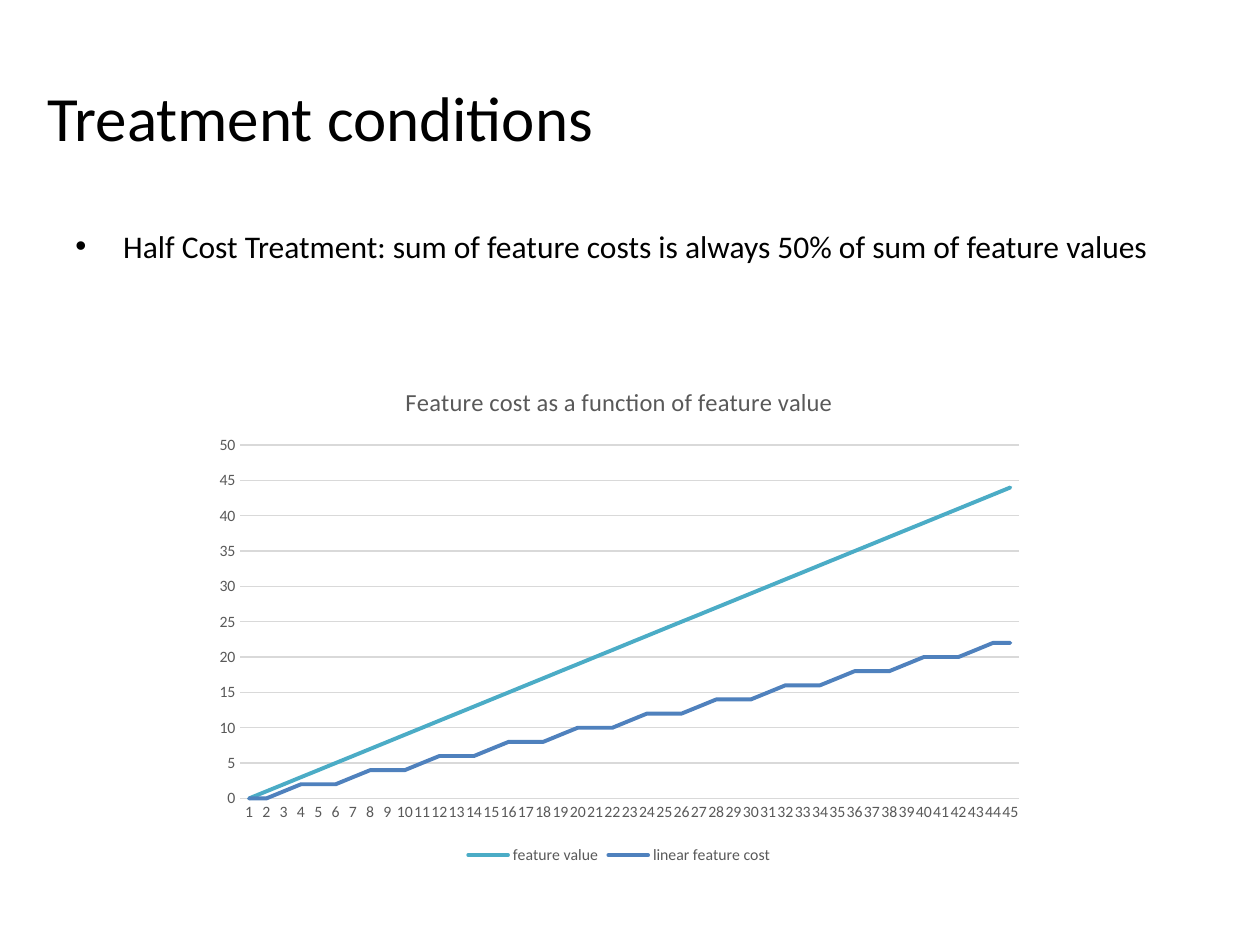
import pptx
import pptx.chart.data
import pptx.dml.color
import pptx.enum.chart
import pptx.enum.text
import pptx.oxml
import pptx.oxml.ns
import pptx.util
from pptx.util import Inches

BLACK = pptx.dml.color.RGBColor(0x00, 0x00, 0x00)
GREY = pptx.dml.color.RGBColor(0x59, 0x59, 0x59)
GRID = pptx.dml.color.RGBColor(0xD9, 0xD9, 0xD9)
TEAL = pptx.dml.color.RGBColor(0x4B, 0xAC, 0xC6)
BLUE = pptx.dml.color.RGBColor(0x4F, 0x81, 0xBD)
FONT = "Calibri"


def style_font(font, size, color):
    font.name = FONT
    font.size = pptx.util.Pt(size)
    font.bold = False
    font.color.rgb = color


def style_line(line, color, width):
    line.color.rgb = color
    line.width = pptx.util.Pt(width)


def write_text(frame, text, *, size, color=BLACK, anchor=None, bullet_indent=None):
    """Fill a text frame with one left-aligned paragraph."""
    frame.word_wrap = True
    if anchor is not None:
        frame.vertical_anchor = anchor
    paragraph = frame.paragraphs[0]
    paragraph.alignment = pptx.enum.text.PP_ALIGN.LEFT
    run = paragraph.add_run()
    run.text = text
    style_font(run.font, size, color)
    if bullet_indent is not None:
        properties = paragraph._p.get_or_add_pPr()
        properties.set("marL", str(bullet_indent))
        properties.set("indent", str(-bullet_indent))
        namespace = pptx.oxml.ns.nsdecls("a")
        for tag in (f'<a:buFont {namespace} typeface="Arial"/>',
                    f'<a:buChar {namespace} char="•"/>'):
            properties.append(pptx.oxml.parse_xml(tag))


def add_title(slide, text):
    title = slide.shapes.title
    title.left, title.top = Inches(0.28), Inches(0.3)
    title.width, title.height = Inches(9.53), Inches(1.25)
    write_text(title.text_frame, text, size=36,
               anchor=pptx.enum.text.MSO_ANCHOR.MIDDLE)


def add_bullet(slide, text):
    body = slide.shapes.add_textbox(Inches(0.5), Inches(1.75), Inches(9), Inches(4.95))
    write_text(body.text_frame, text, size=18, bullet_indent=Inches(0.38))


def style_axes(chart):
    for axis in (chart.category_axis, chart.value_axis):
        axis.major_tick_mark = pptx.enum.chart.XL_TICK_MARK.NONE
        axis.minor_tick_mark = pptx.enum.chart.XL_TICK_MARK.NONE
        style_font(axis.tick_labels.font, 9, GREY)
    style_line(chart.category_axis.format.line, GRID, 0.75)
    chart.value_axis.format.line.fill.background()
    chart.value_axis.has_major_gridlines = True
    style_line(chart.value_axis.major_gridlines.format.line, GRID, 0.75)
    chart.value_axis.minimum_scale = 0
    chart.value_axis.maximum_scale = 50
    chart.value_axis.major_unit = 5


def add_cost_chart(slide):
    # The cost of a feature is half its value, in whole units
    feature_values = range(45)
    cost_data = pptx.chart.data.CategoryChartData()
    cost_data.categories = [str(value + 1) for value in feature_values]
    cost_data.add_series("feature value", feature_values)
    cost_data.add_series("linear feature cost",
                         [round(value / 2) for value in feature_values])

    chart = slide.shapes.add_chart(
        pptx.enum.chart.XL_CHART_TYPE.LINE,
        Inches(1.61), Inches(2.89), Inches(6.61), Inches(4.01), cost_data).chart
    style_font(chart.font, 10, BLACK)

    # Title and legend
    chart.has_title = True
    heading = chart.chart_title.text_frame.paragraphs[0].add_run()
    heading.text = "Feature cost as a function of feature value"
    style_font(heading.font, 14, GREY)
    chart.chart_title.include_in_layout = False
    chart.has_legend = True
    chart.legend.position = pptx.enum.chart.XL_LEGEND_POSITION.BOTTOM
    chart.legend.include_in_layout = False
    style_font(chart.legend.font, 9, GREY)

    # Axes and round-capped lines
    style_axes(chart)
    chart.plots[0].vary_by_categories = False
    for series, color in zip(chart.plots[0].series, (TEAL, BLUE)):
        series.smooth = False
        series.marker.style = pptx.enum.chart.XL_MARKER_STYLE.NONE
        style_line(series.format.line, color, 2.25)
        series._element.spPr.find(pptx.oxml.ns.qn("a:ln")).set("cap", "rnd")


def main():
    presentation = pptx.Presentation()
    presentation.slide_width, presentation.slide_height = Inches(10), Inches(7.5)
    slide = presentation.slides.add_slide(presentation.slide_layouts[5])
    add_title(slide, "Treatment conditions")
    add_bullet(slide, "Half Cost Treatment: sum of feature costs is always "
                      "50% of sum of feature values")
    add_cost_chart(slide)
    presentation.save("out.pptx")


if __name__ == "__main__":
    main()
